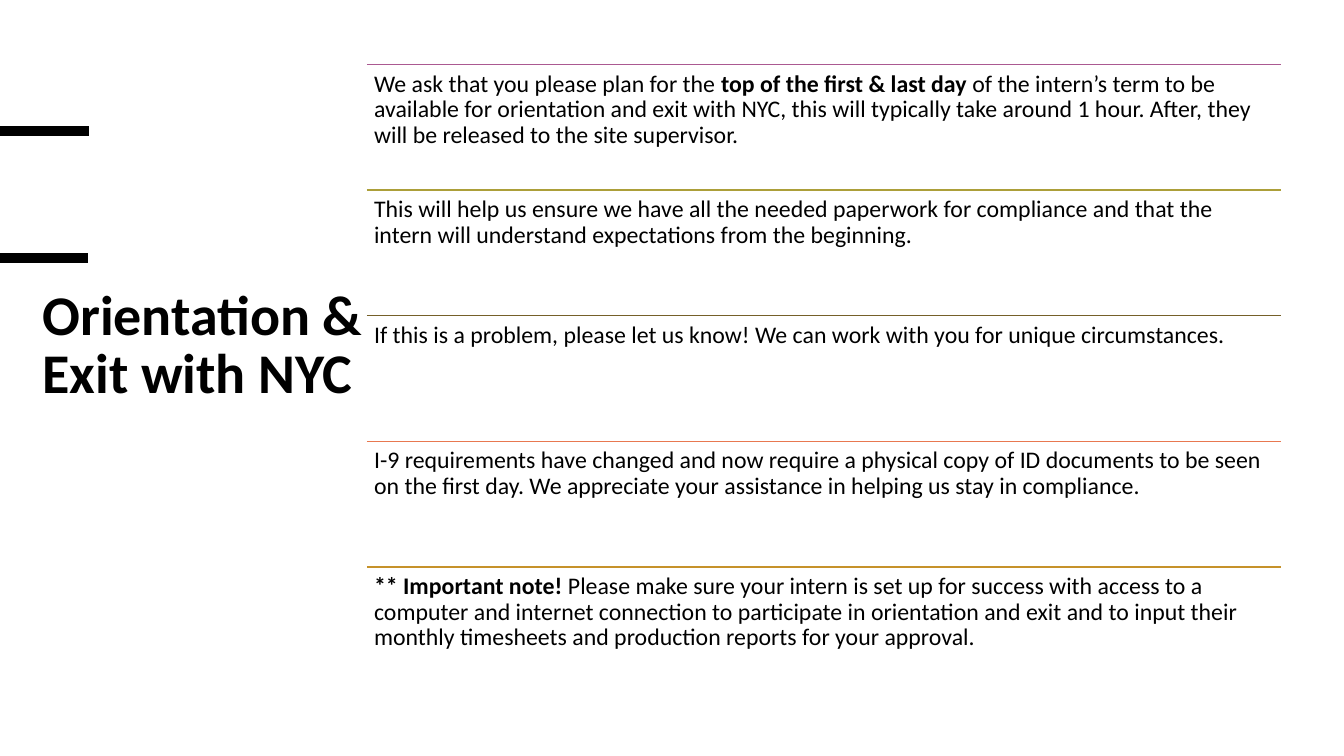
from pptx import Presentation
from pptx import util as u
from pptx.dml.color import RGBColor
from pptx.enum import shapes, text
from pptx.oxml.ns import qn
from lxml import etree

TITLE = "Orientation & Exit with NYC"
# Each row: rule colour, then (words, bold) runs
ROWS = [
    ("plum", [
        ("We ask that you please plan for the ", False),
        ("top of the first & last day ", True),
        ("of the intern’s term to be available for orientation and exit with NYC, "
         "this will typically take around 1 hour. After, they will be released to "
         "the site supervisor.", False)]),
    ("olive", [
        ("This will help us ensure we have all the needed paperwork for compliance "
         "and that the intern will understand expectations from the beginning.", False)]),
    ("brown", [
        ("If this is a problem, please let us know! We can work with you for unique "
         "circumstances.", False)]),
    ("coral", [
        ("I-9 requirements have changed and now require a physical copy of ID "
         "documents to be seen on the first day. We appreciate your assistance in "
         "helping us stay in compliance.", False)]),
    ("gold", [
        ("** Important note!", True),
        (" Please make sure your intern is set up for success with access to a "
         "computer and internet connection to participate in orientation and exit "
         "and to input their monthly timesheets and production reports for your "
         "approval.", False)]),
]
BARS = [(0, 130), (-1, 256)]
BAR_LEN = 88
LEFT, WIDE = 364, 907
TOP, BASE = 64, 687
COLORS = {"black": "000000", "plum": "AB5991", "olive": "AC9F39",
          "brown": "756029", "coral": "E87850", "gold": "C6922A"}
FONT = {"name": "Calibri"}
FRAME = {"word_wrap": True, "auto_size": text.MSO_AUTO_SIZE.NONE,
         "vertical_anchor": text.MSO_ANCHOR.TOP}
INSET = {f"margin_{side}": u.Inches(0.07)
         for side in ("left", "top", "right", "bottom")}


def px(num):
    """Turn px, at 100 to the inch, into EMU."""
    return u.Emu(round(num * 9144))


def style(item, **vals):
    for key, val in vals.items():
        setattr(item, key, val)


def rule(slide, x, y, size, color, weight):
    line = slide.shapes.add_connector(
        shapes.MSO_CONNECTOR.STRAIGHT, px(x), px(y), px(x + size), px(y))
    line.line.color.rgb = RGBColor.from_string(COLORS[color])
    line.line.width = u.Pt(weight)
    etree.SubElement(line._element.spPr, qn("a:effectLst"))


def write(frame, runs, size, space):
    para = frame.paragraphs[0]
    style(para, line_spacing=space, alignment=text.PP_ALIGN.LEFT)
    for words, bold in runs:
        run = para.add_run()
        run.text = words
        style(run.font, size=u.Pt(size), bold=bold, **FONT)
        run.font.color.rgb = RGBColor.from_string(COLORS["black"])


def main():
    deck = Presentation()
    style(deck, slide_width=px(1333), slide_height=px(750))
    slide = deck.slides.add_slide(deck.slide_layouts[5])

    title = slide.shapes.title
    style(title, left=px(32), top=px(283), width=px(370), height=px(433))
    style(title.text_frame, **FRAME)
    write(title.text_frame, [(TITLE, True)], 40, 0.85)

    for x, y in BARS:
        rule(slide, x, y, BAR_LEN, "black", 6.75)

    step = (BASE - TOP) / len(ROWS)
    for i, (color, runs) in enumerate(ROWS):
        y = TOP + i * step
        rule(slide, LEFT, y, WIDE, color, 1)
        box = slide.shapes.add_textbox(px(LEFT), px(y), px(WIDE), px(step))
        style(box.text_frame, **FRAME, **INSET)
        write(box.text_frame, runs, 17, 0.9)

    deck.save("out.pptx")


if __name__ == "__main__":
    main()
